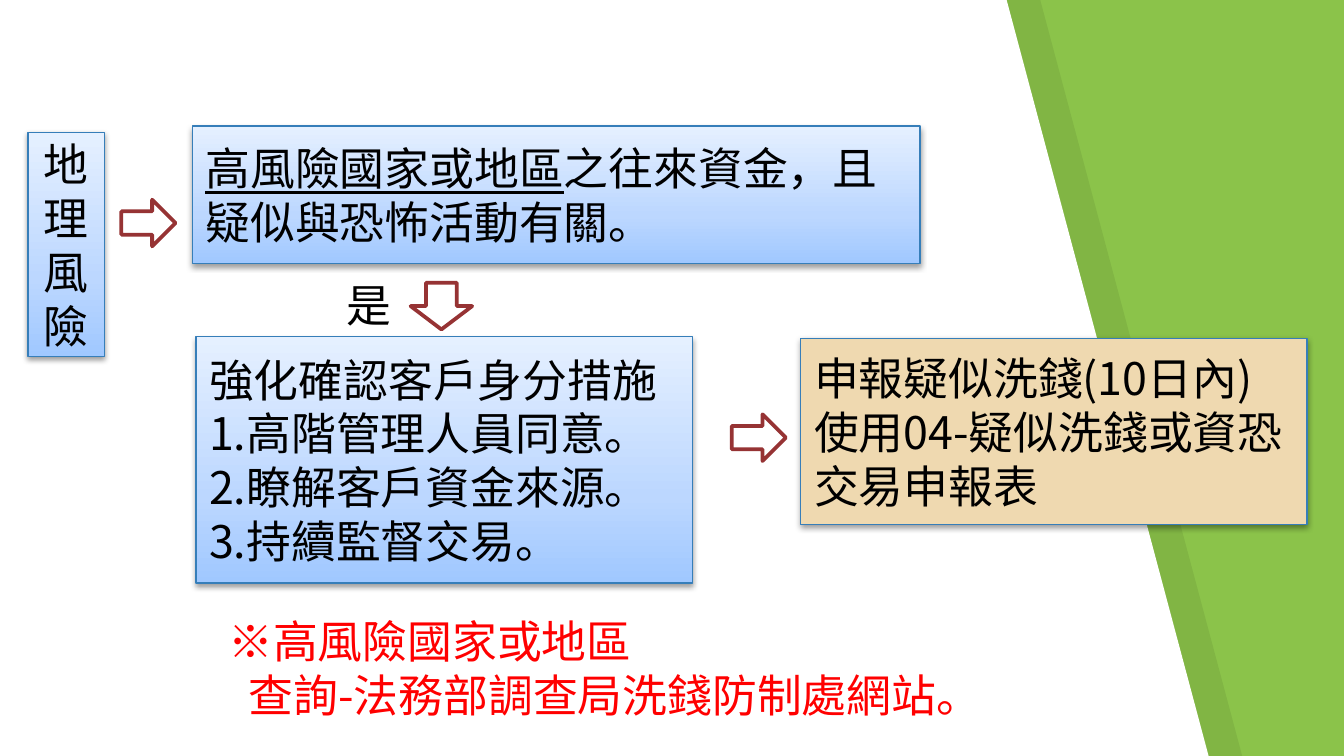
from lxml import etree
from pptx import Presentation
from pptx.dml.color import RGBColor
from pptx.enum import shapes, text
from pptx.oxml import parse_xml
from pptx.oxml.ns import nsdecls, qn
from pptx.util import Pt

GREEN = RGBColor(0x8B, 0xC3, 0x4A)
WHITE = RGBColor(0xFF, 0xFF, 0xFF)
BLACK = RGBColor(0, 0, 0)
RED = RGBColor(0xFF, 0, 0)
SAND = RGBColor(0xEF, 0xD9, 0xB0)
BLUE = RGBColor(0x36, 0x7E, 0xB9)
MAROON = RGBColor(0x96, 0x33, 0x34)
BLUE_STOPS = [(0, RGBColor(0xA0, 0xC8, 0xFF)),
              (35, RGBColor(0xBC, 0xD7, 0xFF)),
              (100, RGBColor(0xE5, 0xF0, 0xFF))]
FONT = "Noto Sans CJK SC"
WIDTH, HEIGHT = 720, 405

# Content: each paragraph is a list of (text, underlined) runs
# Boxes: left, top, width, height, fill (None = blue gradient), centred, paragraphs
BOXES = [
    (15, 71, 41, 120, None, True, [[("地理風險", False)]]),
    (103, 67.5, 390, 73.7, None, False,
     [[("高風險國家或地區", True), ("之往來資金，且疑似與恐怖活動有關。", False)]]),
    (105, 180.3, 266, 132, None, False,
     [[("強化確認客戶身分措施", False)],
      [("1.高階管理人員同意。", False)],
      [("2.瞭解客戶資金來源。", False)],
      [("3.持續監督交易。", False)]]),
    (429, 181.3, 271.2, 99.7, SAND, False,
     [[("申報疑似洗錢(10日內)", False)],
      [("使用04-疑似洗錢或資恐交易申報表", False)]]),
]
RIGHT, DOWN = shapes.MSO_SHAPE.RIGHT_ARROW, shapes.MSO_SHAPE.DOWN_ARROW
ARROWS = [(RIGHT, 65, 107, 29, 25), (DOWN, 220, 151.5, 33, 25), (RIGHT, 392, 222, 29, 25)]
# Labels: left, top, width, height, font, colour, paragraphs
LABELS = [
    (178.5, 145, 41, 36, "Arial", BLACK, [[("是", False)]]),
    (115.2, 325.4, 538, 65.4, FONT, RED,
     [[("※高風險國家或地區", False)], [("查詢-法務部調查局洗錢防制處網站。", False)]]),
]
NOTE_INDENT = 11
# Background bands: left edge, colour, opacity in percent
BANDS = [(18, BLACK, 7), (0, WHITE, 100)]


def write(shape, paragraphs, font=FONT, color=BLACK, align=text.PP_ALIGN.LEFT):
    frame = shape.text_frame
    frame.word_wrap = True
    for index, runs in enumerate(paragraphs):
        paragraph = frame.paragraphs[0] if index == 0 else frame.add_paragraph()
        paragraph.alignment = align
        for words, underlined in runs:
            run = paragraph.add_run()
            run.text = words
            run.font.size = Pt(24)
            run.font.name = font
            run.font.color.rgb = color
            run.font.underline = underlined
            east_asian = etree.Element(qn("a:ea"), typeface=FONT)
            run.font._element.find(qn("a:latin")).addnext(east_asian)


def fill_gradient(shape):
    shape.fill.gradient()
    shape.fill.gradient_angle = 90
    stops = shape._element.spPr.find(qn("a:gradFill")).find(qn("a:gsLst"))
    for stop in list(stops):
        stops.remove(stop)
    for position, color in BLUE_STOPS:
        stop = etree.SubElement(stops, qn("a:gs"), pos=str(position * 1000))
        etree.SubElement(stop, qn("a:srgbClr"), val=str(color))


def add_shadow(shape):
    shape._element.spPr.append(parse_xml(
        f'<a:effectLst {nsdecls("a")}><a:outerShdw blurRad="{Pt(3.1)}" dist="{Pt(1.6)}" '
        'dir="5400000" rotWithShape="0"><a:srgbClr val="000000"><a:alpha val="38000"/>'
        '</a:srgbClr></a:outerShdw></a:effectLst>'))


presentation = Presentation()
presentation.slide_width, presentation.slide_height = Pt(WIDTH), Pt(HEIGHT)
slide = presentation.slides.add_slide(presentation.slide_layouts[6])

# Green background with slanted bands
slide.background.fill.solid()
slide.background.fill.fore_color.rgb = GREEN
for left, color, opacity in BANDS:
    builder = slide.shapes.build_freeform(Pt(left), 0, scale=1.0)
    builder.add_line_segments([(Pt(left + x), Pt(y)) for x, y in
                               [(0, HEIGHT), (647.5, HEIGHT), (539.3, 0)]])
    band = builder.convert_to_shape()
    band.fill.solid()
    band.fill.fore_color.rgb = color
    band.line.fill.background()
    band.shadow.inherit = False
    if opacity < 100:
        rgb = band._element.spPr.find(qn("a:solidFill"))[0]
        etree.SubElement(rgb, qn("a:alpha"), val=str(opacity * 1000))

# Step boxes
for left, top, width, height, color, centred, paragraphs in BOXES:
    box = slide.shapes.add_shape(shapes.MSO_SHAPE.RECTANGLE,
                                 Pt(left), Pt(top), Pt(width), Pt(height))
    if color is None:
        fill_gradient(box)
    else:
        box.fill.solid()
        box.fill.fore_color.rgb = color
    box.line.color.rgb = BLUE
    box.line.width = Pt(0.75)
    add_shadow(box)
    box.text_frame.vertical_anchor = text.MSO_ANCHOR.MIDDLE
    align = text.PP_ALIGN.CENTER if centred else text.PP_ALIGN.LEFT
    write(box, paragraphs, align=align)

# Block arrows between the steps
for kind, left, top, width, height in ARROWS:
    arrow = slide.shapes.add_shape(kind, Pt(left), Pt(top), Pt(width), Pt(height))
    arrow.fill.solid()
    arrow.fill.fore_color.rgb = WHITE
    arrow.line.color.rgb = MAROON
    arrow.line.width = Pt(2)
    arrow.shadow.inherit = False

# Free labels; later lines of a note are indented
for left, top, width, height, font, color, paragraphs in LABELS:
    label = slide.shapes.add_textbox(Pt(left), Pt(top), Pt(width), Pt(height))
    write(label, paragraphs, font, color)
    for paragraph in label.text_frame.paragraphs[1:]:
        paragraph._p.get_or_add_pPr().set("marL", str(Pt(NOTE_INDENT)))

presentation.save("out.pptx")
